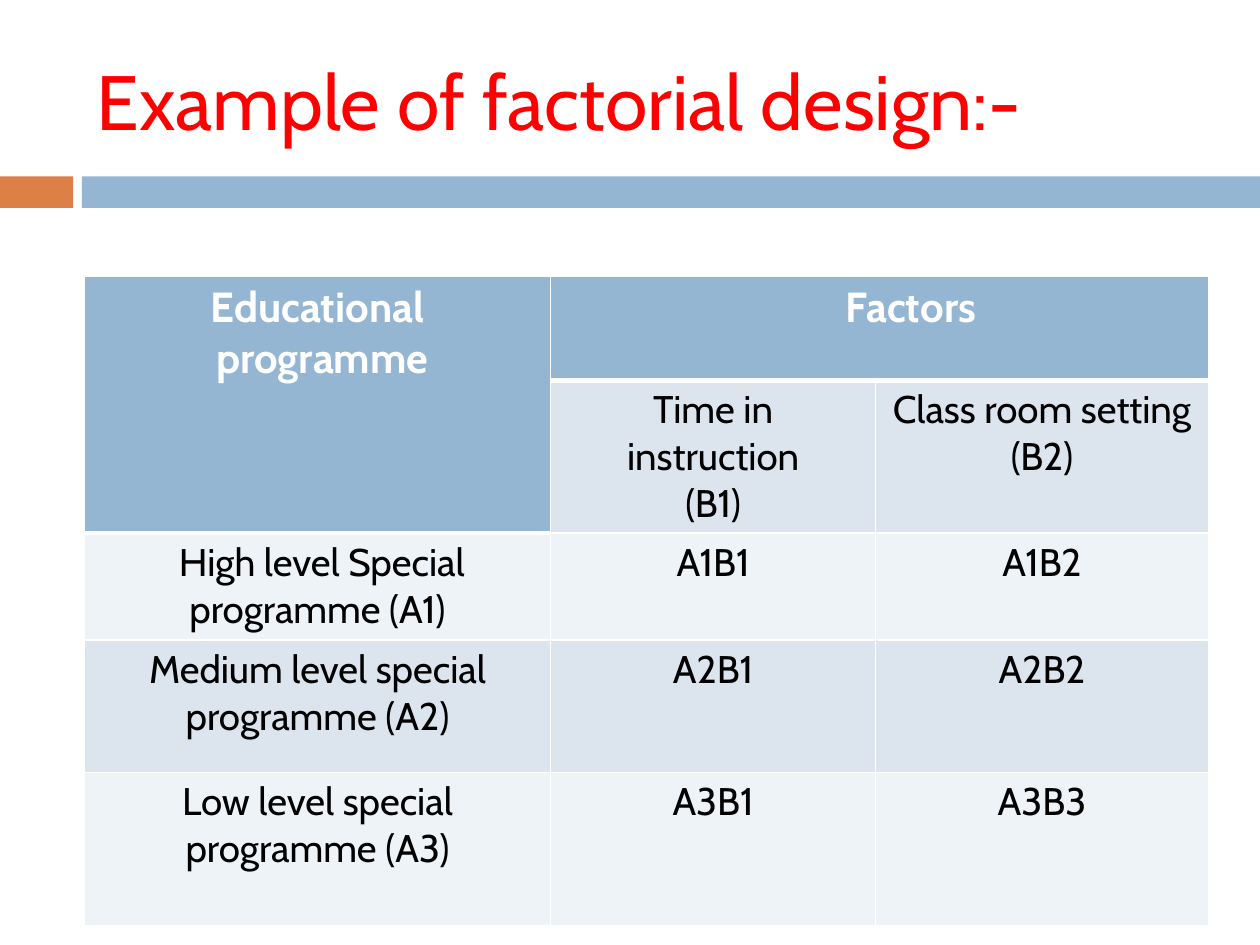
from lxml import etree
from pptx import Presentation
from pptx.dml.color import RGBColor
from pptx.enum.shapes import MSO_SHAPE
from pptx.enum.text import MSO_ANCHOR, PP_ALIGN
from pptx.oxml.ns import qn
from pptx.util import Inches, Pt

FONT = "Cabin"
COLORS = {
    "orange": "DD8047", "blue": "94B6D2", "band": "DCE5EE", "pale": "EEF3F7",
    "red": "FF0000", "white": "FFFFFF", "black": "000000",
}
COLUMN_WIDTHS = [3.7, 2.58, 2.64]
ROW_HEIGHTS = [0.83, 1.21, 0.85, 1.05, 1.22]
ROWS = [
    [["Educational", " programme"], ["Factors"], None],
    [None, ["Time in instruction", "(B1)"], ["Class room setting", "(B2)"]],
    [[" High level Special programme (A1)"], ["A1B1"], ["A1B2"]],
    [["Medium level special programme (A2)"], ["A2B1"], ["A2B2"]],
    [["Low level special programme (A3)"], ["A3B1"], ["A3B3"]],
]


def rgb(name):
    return RGBColor.from_string(COLORS[name])


def add_run(paragraph, text, size, color, bold=False):
    run = paragraph.add_run()
    run.text = text
    run.font.name = FONT
    run.font.size = Pt(size)
    run.font.bold = bold
    run.font.color.rgb = rgb(color)


def add_bar(slide, left, width, color):
    bar = slide.shapes.add_shape(
        MSO_SHAPE.RECTANGLE, Inches(left), Inches(1.4), Inches(width), Inches(0.25))
    bar.shadow.inherit = False
    bar.fill.solid()
    bar.fill.fore_color.rgb = rgb(color)
    bar.line.fill.background()


def add_title(slide, text):
    box = slide.shapes.add_textbox(Inches(0.67), Inches(0.25), Inches(8.92), Inches(1.08))
    frame = box.text_frame
    frame.word_wrap = True
    frame.vertical_anchor = MSO_ANCHOR.MIDDLE
    add_run(frame.paragraphs[0], text, 44, "red")


def set_borders(cell, top, bottom):
    properties = cell._tc.get_or_add_tcPr()
    for side, width in (("L", 1), ("R", 1), ("T", top), ("B", bottom)):
        line = etree.SubElement(properties, qn(f"a:ln{side}"), w=str(Pt(width)))
        fill = etree.SubElement(line, qn("a:solidFill"))
        etree.SubElement(fill, qn("a:srgbClr"), val=COLORS["white"])


def fill_cell(cell, lines, size, color, bold):
    frame = cell.text_frame
    for index, text in enumerate(lines):
        paragraph = frame.add_paragraph() if index else frame.paragraphs[0]
        paragraph.alignment = PP_ALIGN.CENTER
        add_run(paragraph, text, size, color, bold)


def add_design_table(slide):
    table = slide.shapes.add_table(
        len(ROWS), len(COLUMN_WIDTHS), Inches(0.67), Inches(2.19),
        Inches(sum(COLUMN_WIDTHS)), Inches(sum(ROW_HEIGHTS))).table
    for column, width in zip(table.columns, COLUMN_WIDTHS):
        column.width = Inches(width)
    for row, height in zip(table.rows, ROW_HEIGHTS):
        row.height = Inches(height)
    table.cell(0, 0).merge(table.cell(1, 0))
    table.cell(0, 1).merge(table.cell(0, 2))

    for row_index, row in enumerate(ROWS):
        for column_index, lines in enumerate(row):
            cell = table.cell(row_index, column_index)
            last_header_row = 0 if column_index else 1
            is_header = row_index <= last_header_row
            set_borders(cell, 3 if row_index == last_header_row + 1 else 1,
                        3 if is_header else 1)
            cell.fill.solid()
            band = "band" if row_index % 2 else "pale"
            cell.fill.fore_color.rgb = rgb("blue" if is_header else band)
            if lines and is_header:
                fill_cell(cell, lines, 24, "white", True)
            elif lines:
                fill_cell(cell, lines, 22, "black", False)

    factors = table.cell(0, 1).text_frame.paragraphs[0]
    factors.level = 1
    factors._p.get_or_add_pPr().set("marL", str(Inches(0.5)))


def main():
    presentation = Presentation()
    presentation.slide_width = Inches(10)
    presentation.slide_height = Inches(7.5)
    slide = presentation.slides.add_slide(presentation.slide_layouts[6])
    add_bar(slide, 0, 0.58, "orange")
    add_bar(slide, 0.65, 9.35, "blue")
    add_title(slide, "Example of factorial design:-")
    add_design_table(slide)
    presentation.save("out.pptx")


if __name__ == "__main__":
    main()
